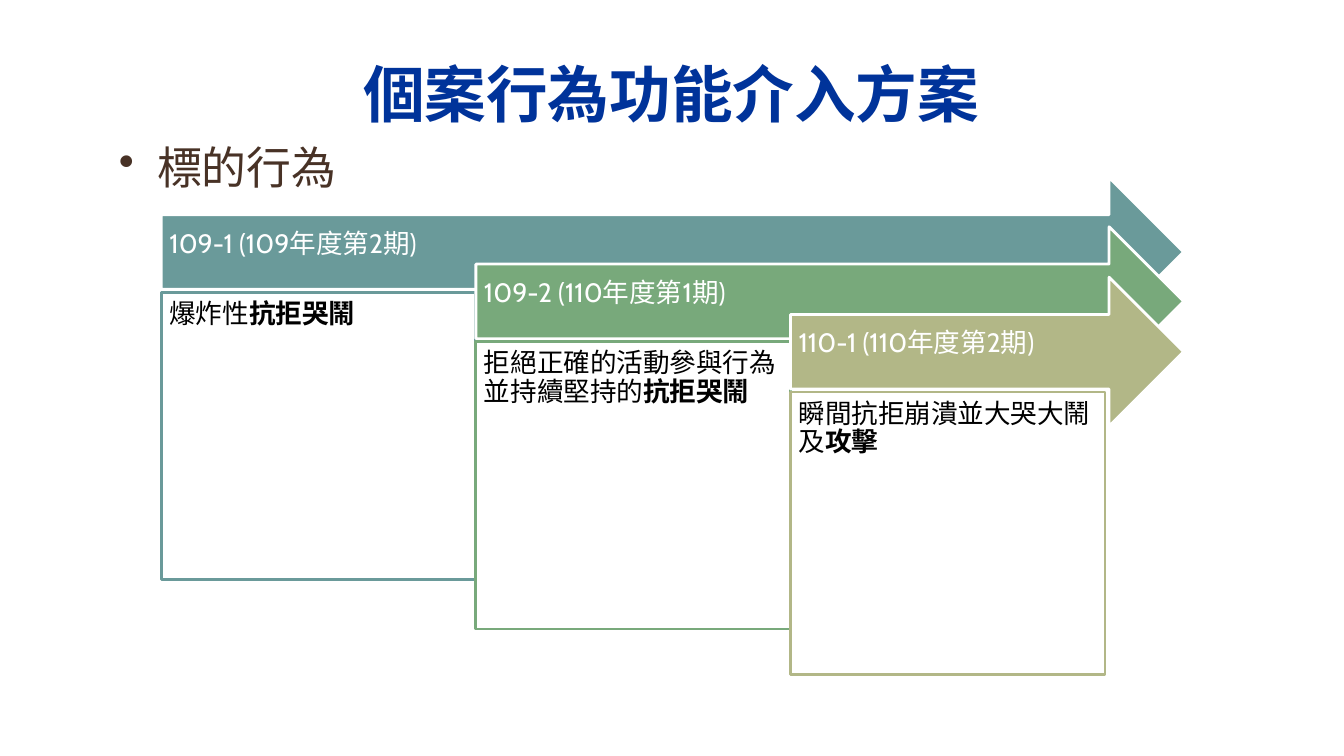
import pptx
import pptx.dml.color
import pptx.enum.shapes
import pptx.enum.text
import pptx.oxml.ns
import pptx.util
from lxml import etree

RGBColor = pptx.dml.color.RGBColor
MSO_SHAPE = pptx.enum.shapes.MSO_SHAPE
MSO_ANCHOR = pptx.enum.text.MSO_ANCHOR
PP_ALIGN = pptx.enum.text.PP_ALIGN

NAVY = RGBColor(0x00, 0x33, 0x9A)
BROWN = RGBColor(0x48, 0x32, 0x26)
WHITE = RGBColor(0xFF, 0xFF, 0xFF)
BLACK = RGBColor(0x00, 0x00, 0x00)
TEAL = RGBColor(0x6A, 0x9A, 0x9A)
GREEN = RGBColor(0x78, 0xA9, 0x7B)
OLIVE = RGBColor(0xB2, 0xB7, 0x87)

FONT = "Cabin"
SEMESTERS = [
    ("109-1 (109年度第2期)", "爆炸性", "抗拒哭鬧", TEAL, 285),
    ("109-2 (110年度第1期)", "拒絕正確的活動參與行為並持續堅持的", "抗拒哭鬧", GREEN, 285),
    ("110-1 (110年度第2期)", "瞬間抗拒崩潰並大哭大鬧及", "攻擊", OLIVE, 280),
]


def px(length):
    """Turn px, at 100 to the inch, into EMU."""
    return pptx.util.Emu(length * 9144)


def apply_format(target, values):
    """Set each named attribute on the target."""
    for name, value in values.items():
        setattr(target, name, value)


def write(frame, runs, size, colour, align, anchor, insets, spacing=1.0):
    """Write one paragraph of (text, bold) runs into a text frame."""
    left, top, right, bottom = map(px, insets)
    apply_format(frame, {
        "word_wrap": True, "vertical_anchor": anchor, "margin_left": left,
        "margin_top": top, "margin_right": right, "margin_bottom": bottom})
    paragraph = frame.paragraphs[0]
    apply_format(paragraph, {"alignment": align, "line_spacing": spacing})
    for text, bold in runs:
        run = paragraph.add_run()
        run.text = text
        apply_format(run.font, {
            "name": FONT, "size": pptx.util.Pt(size), "bold": bold})
        run.font.color.rgb = colour
    return paragraph


def add_block(slide, preset, box, fill, outline):
    """Add a flat filled shape with a 2 pt outline."""
    block = slide.shapes.add_shape(preset, *map(px, box))
    block.shadow.inherit = False
    block.fill.solid()
    block.fill.fore_color.rgb = fill
    block.line.color.rgb = outline
    block.line.width = pptx.util.Pt(2)
    return block


def add_title(slide, box):
    """Add the centred slide title."""
    title = slide.shapes.add_textbox(*map(px, box))
    write(title.text_frame, [("個案行為功能介入方案", True)], 44, NAVY,
          PP_ALIGN.CENTER, MSO_ANCHOR.MIDDLE, (10, 5, 10, 5))


def add_topic(slide, box):
    """Add the bulleted topic line."""
    topic = slide.shapes.add_textbox(*map(px, box))
    paragraph = write(topic.text_frame, [("標的行為", False)], 32, BROWN,
                      PP_ALIGN.LEFT, MSO_ANCHOR.TOP, (10, 5, 10, 5))
    properties = paragraph._p.get_or_add_pPr()
    properties.set("marL", str(px(38)))
    properties.set("indent", str(px(-38)))
    bullet = etree.SubElement(properties, pptx.oxml.ns.qn("a:buChar"))
    bullet.set("char", "•")


def add_timeline(slide, box):
    """Add stepped semester arrows, each with its behaviour panel below."""
    left, top, width, arrow_height = box
    panel_width = 312
    for index, (semester, lead, behaviour, colour, height) in enumerate(SEMESTERS):
        offset = index * panel_width
        step_top = top + index * 99 // 2
        arrow = add_block(
            slide, MSO_SHAPE.RIGHT_ARROW,
            (left + offset, step_top, width - offset, arrow_height), colour, WHITE)
        write(arrow.text_frame, [(semester, False)], 19, WHITE,
              PP_ALIGN.LEFT, MSO_ANCHOR.MIDDLE, (8, 8, 28, 23), 0.9)
        panel = add_block(
            slide, MSO_SHAPE.RECTANGLE,
            (left + offset, step_top + 114, panel_width, height), WHITE, colour)
        write(panel.text_frame, [(lead, False), (behaviour, True)], 19, BLACK,
              PP_ALIGN.LEFT, MSO_ANCHOR.TOP, (8, 8, 8, 8), 0.9)


def main():
    """Build and save the slide."""
    deck = pptx.Presentation()
    apply_format(deck, {"slide_width": px(1333), "slide_height": px(750)})
    slide = deck.slides.add_slide(deck.slide_layouts[6])
    add_title(slide, (66, 30, 1200, 125))
    add_timeline(slide, (160, 176, 1014, 148))
    add_topic(slide, (108, 134, 318, 54))
    deck.save("out.pptx")


if __name__ == "__main__":
    main()
